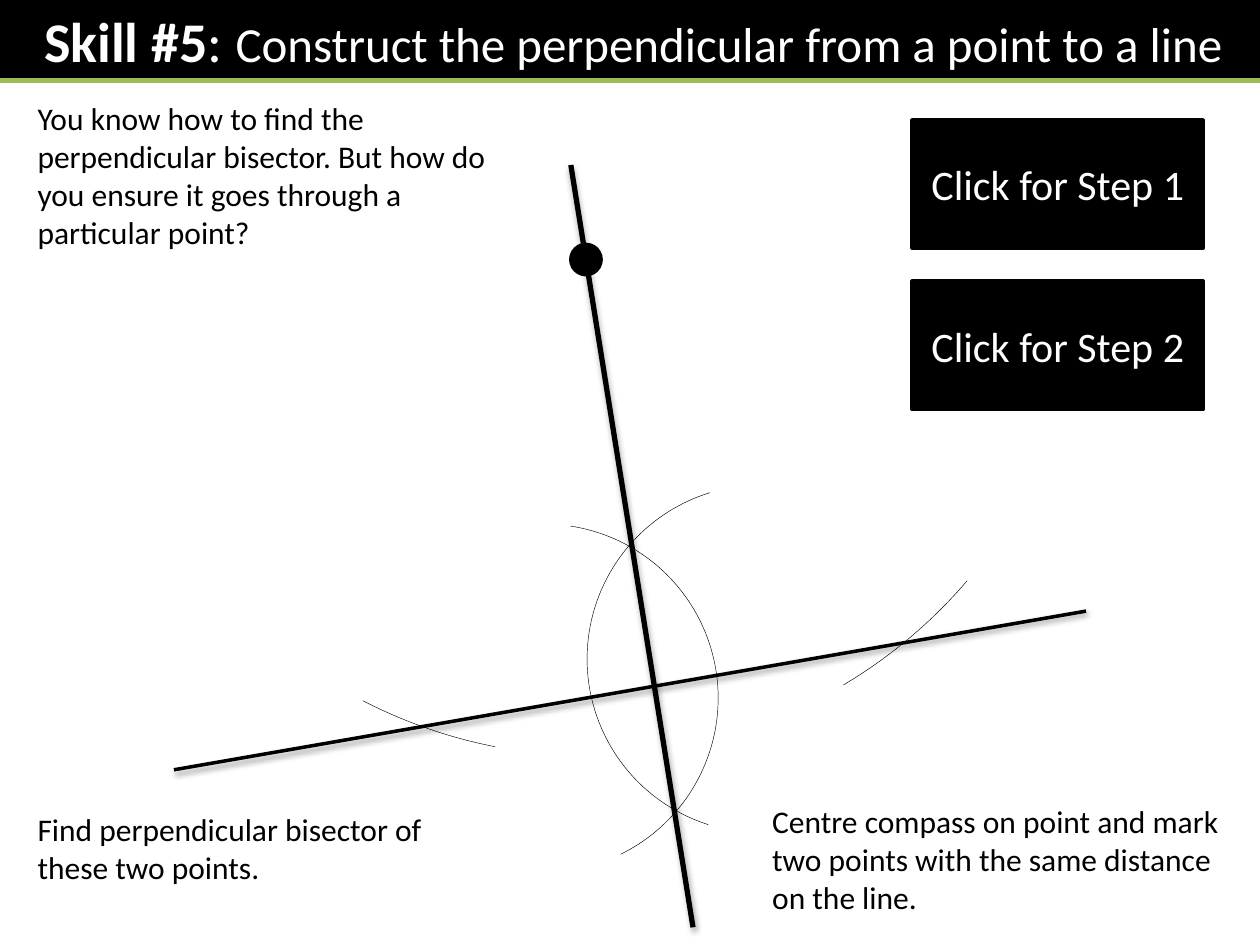
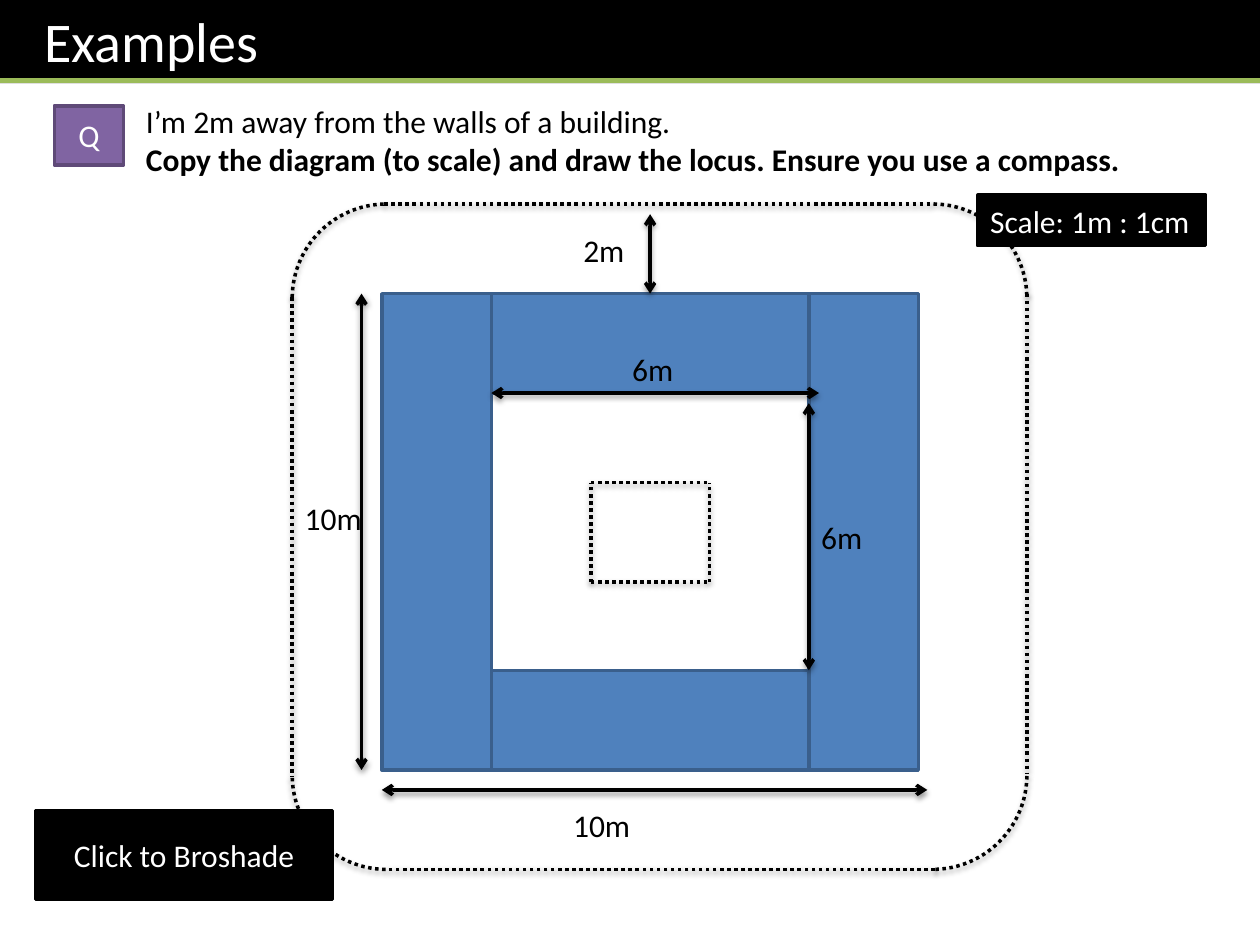
import pptx
import pptx.util
import pptx.dml.color
import pptx.enum.dml
import pptx.enum.shapes
import pptx.enum.text
import pptx.oxml

Pt = pptx.util.Pt
SHAPE = pptx.enum.shapes.MSO_SHAPE
ANCHOR = pptx.enum.text.MSO_ANCHOR
ALIGN = pptx.enum.text.PP_ALIGN
STRAIGHT = pptx.enum.shapes.MSO_CONNECTOR.STRAIGHT
NS = 'xmlns:a="http://schemas.openxmlformats.org/drawingml/2006/main"'
FONT = "Calibri"
COLOURS = {
    "ink": "000000",
    "paper": "FFFFFF",
    "rule": "9BBB59",
    "building": "4F81BD",
    "building edge": "3A5F8C",
    "question": "8064A2",
    "question edge": "5F4A78",
}
RGB = {name: pptx.dml.color.RGBColor.from_string(code) for name, code in COLOURS.items()}


def draw_stroke(mark, width, colour="ink", dotted=False, arrows=False, shade=0, drop=1.6):
    mark.line.color.rgb = RGB[colour]
    mark.line.width = Pt(width)
    if dotted:
        mark.line.dash_style = pptx.enum.dml.MSO_LINE.ROUND_DOT
    if arrows:
        for end in ("headEnd", "tailEnd"):
            mark.line._get_or_add_ln().append(pptx.oxml.parse_xml(f'<a:{end} {NS} type="arrow"/>'))
    shadow = ""
    if shade:
        shadow = (
            f'<a:outerShdw blurRad="{Pt(3.1)}" dist="{Pt(drop)}" dir="5400000" rotWithShape="0">'
            f'<a:srgbClr val="{COLOURS["ink"]}"><a:alpha val="{shade * 1000}"/></a:srgbClr></a:outerShdw>'
        )
    mark._element.spPr.append(pptx.oxml.parse_xml(f"<a:effectLst {NS}>{shadow}</a:effectLst>"))


def write_text(holder, paragraphs, colour="ink", align=ALIGN.LEFT, anchor=ANCHOR.TOP):
    frame = holder.text_frame
    frame.word_wrap = True
    frame.auto_size = pptx.enum.text.MSO_AUTO_SIZE.NONE
    frame.vertical_anchor = anchor
    for index, pieces in enumerate(paragraphs):
        paragraph = frame.add_paragraph() if index else frame.paragraphs[0]
        paragraph.alignment = align
        for words, size, bold in pieces:
            run = paragraph.add_run()
            run.text = words
            run.font.name = FONT
            run.font.size = Pt(size)
            run.font.bold = bold
            run.font.color.rgb = RGB[colour]


deck = pptx.Presentation()
deck.slide_width, deck.slide_height = Pt(720), Pt(540)

headings = [
    (46, [("Skill #5", 32, True), (": ", 32, False),
          ("Construct the perpendicular from a point to a line", 28, False)]),
    (47.5, [("Examples", 32, False)]),
]
pages = []
for band_height, heading in headings:
    page = deck.slides.add_slide(deck.slide_layouts[5])
    title = page.shapes.title
    title.left, title.top, title.width, title.height = Pt(0), Pt(0), Pt(720), Pt(band_height)
    title.fill.solid()
    title.fill.fore_color.rgb = RGB["ink"]
    title.text_frame.margin_left = Pt(25.2)
    write_text(title, [heading], "paper")
    rule = page.shapes.add_connector(STRAIGHT, Pt(0), Pt(46), Pt(720), Pt(46))
    draw_stroke(rule, 3, "rule")
    pages.append(page.shapes)
skill, example = pages

base_line = skill.add_connector(STRAIGHT, Pt(99.4), Pt(439.9), Pt(620.6), Pt(349.2))
draw_stroke(base_line, 2, shade=38)

point = skill.add_shape(SHAPE.OVAL, Pt(326.2), Pt(139.7), Pt(17.3), Pt(17.3))
point.fill.solid()
point.fill.fore_color.rgb = RGB["ink"]
draw_stroke(point, 2)

compass_arcs = [
    (54, -135.4, 566.6, 0, True, (72.44, 83.68)),
    (54, -134.6, 566.6, 0, True, (37.62, 47.37)),
    (211.7, 299.5, 198.7, 355.8, True, (67.11, 154.28)),
    (335.5, 277.2, 198.7, 355.8, False, (67.11, 154.28)),
]
for left, top, diameter, turn, mirrored, sweep in compass_arcs:
    arc = skill.add_shape(SHAPE.ARC, Pt(left), Pt(top), Pt(diameter), Pt(diameter))
    arc.adjustments[0], arc.adjustments[1] = sweep
    arc.rotation = turn
    if mirrored:
        arc._element.spPr.xfrm.set("flipH", "1")
    arc.fill.background()
    draw_stroke(arc, 0.25)

bisector = skill.add_connector(STRAIGHT, Pt(396), Pt(529.9), Pt(326.2), Pt(94.3))
draw_stroke(bisector, 3, shade=35, drop=1.8)

wing_width, building_height = 62.6, 272.2
west, north, courtyard_west, courtyard_east = 218.2, 167.8, 280.8, 462.2
bar_width, bar_height, south_bar = courtyard_east - courtyard_west, 56.9, 383.1
building = [
    (courtyard_west, north, bar_width, bar_height),
    (courtyard_west, south_bar, bar_width, bar_height),
    (west, north, wing_width, building_height),
    (courtyard_east, north, wing_width, building_height),
]
for left, top, width, height in building:
    block = example.add_shape(SHAPE.RECTANGLE, Pt(left), Pt(top), Pt(width), Pt(height))
    block.fill.solid()
    block.fill.fore_color.rgb = RGB["building"]
    draw_stroke(block, 2, "building edge")

corners = [(167, 116.6), (478.8, 116.6), (478.8, 388.8), (167, 388.8)]
for quarter, (left, top) in enumerate(corners):
    corner = example.add_shape(SHAPE.ARC, Pt(left), Pt(top), Pt(108), Pt(108))
    corner.adjustments[0], corner.adjustments[1] = 108.38, 161.24
    corner.rotation = 90 * quarter
    corner.fill.background()
    draw_stroke(corner, 2, dotted=True, shade=38)

locus_lines = [
    (167, 169.9, 167, 444.2),
    (219.6, 116.6, 533.5, 116.6),
    (534.2, 496.8, 220.3, 496.8),
    (586.8, 167.8, 586.8, 442.1),
    (337.7, 275.8, 405.4, 275.8),
    (337.7, 332.6, 405.4, 332.6),
    (337.7, 332.6, 337.7, 275.8),
    (405.4, 332.6, 405.4, 275.8),
]
dimension_lines = [
    (371.5, 167.8, 371.5, 122.4),
    (206.6, 167.8, 206.6, 440),
    (218.2, 451.4, 529.9, 451.4),
    (468, 224.6, 280.8, 224.6),
    (462.2, 383, 462.2, 230.4),
]
for ends_in_arrows, group in ((False, locus_lines), (True, dimension_lines)):
    for ends in group:
        segment = example.add_connector(STRAIGHT, *map(Pt, ends))
        draw_stroke(segment, 2, dotted=not ends_in_arrows, arrows=ends_in_arrows, shade=38)

notes = [
    (skill, 14.4, 53.3, 277.9, 94.3, ["You know how to find the perpendicular bisector. "
                                      "But how do you ensure it goes through a particular point?"]),
    (skill, 434.2, 455, 277.9, 72.7, ["Centre compass on point and mark two points "
                                      "with the same distance on the line."]),
    (skill, 14.4, 459.4, 277.9, 51.1, ["Find perpendicular bisector of these two points."]),
    (example, 76.3, 54.7, 572.4, 51.1, [
        "I’m 2m away from the walls of a building.",
        "Copy the diagram (to scale) and draw the locus. Ensure you use a compass."]),
]
measurements = [("10m", 167, 281.5), ("2m", 326.2, 128.2), ("10m", 320.4, 457.2),
                ("6m", 354.2, 196.6), ("6m", 462.2, 292.3)]
notes += [(example, left, top, 51.1, 28.8, [words]) for words, left, top in measurements]
for page, left, top, width, height, lines in notes:
    note = page.add_textbox(Pt(left), Pt(top), Pt(width), Pt(height))
    write_text(note, [[(words, 18, index > 0)] for index, words in enumerate(lines)])

panels = [
    (skill, 521.3, 68.4, 166.3, 73.4, "Click for Step 1", 24, "ink", "ink"),
    (skill, 521.3, 160.6, 166.3, 73.4, "Click for Step 2", 24, "ink", "ink"),
    (example, 558.7, 111.6, 130.3, 28.8, "Scale: 1m : 1cm", 18, "ink", "ink"),
    (example, 31, 60.5, 39.6, 33.8, "Q", 18, "question", "question edge"),
    (example, 20.2, 463, 169.9, 51.1, "Click to Broshade", 18, "ink", "ink"),
]
for page, left, top, width, height, words, size, fill, edge in panels:
    panel = page.add_shape(SHAPE.RECTANGLE, Pt(left), Pt(top), Pt(width), Pt(height))
    panel.fill.solid()
    panel.fill.fore_color.rgb = RGB[fill]
    draw_stroke(panel, 2, edge)
    align = ALIGN.LEFT if words.startswith("Scale") else ALIGN.CENTER
    write_text(panel, [[(words, size, False)]], "paper", align, ANCHOR.MIDDLE)

deck.save("out.pptx")
